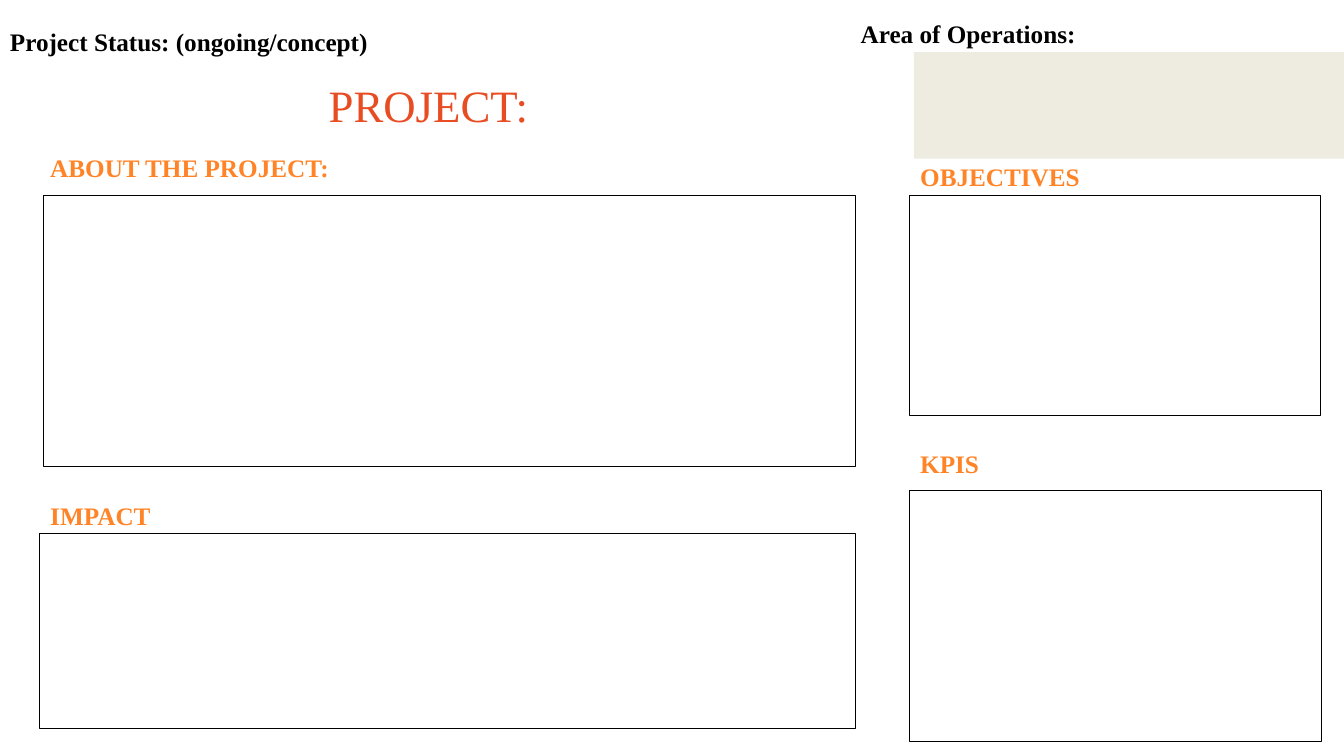
from pptx import Presentation
from pptx.dml.color import RGBColor
from pptx.enum.shapes import MSO_SHAPE
from pptx.enum.text import MSO_ANCHOR, MSO_AUTO_SIZE, PP_ALIGN
from pptx.util import Pt

BLACK = RGBColor(0x00, 0x00, 0x00)
RED = RGBColor(0xE8, 0x4C, 0x22)
ORANGE = RGBColor(0xFF, 0x84, 0x27)
BEIGE = RGBColor(0xEE, 0xEC, 0xE1)
FONT = "Times New Roman"
WIDE, HIGH = 960, 540

# Content: text, then left, top, width, height in points
TITLE = ("PROJECT:", (227.5, 51.8, 713.5, 52.6))
LABELS = [
    ("Project Status: (ongoing/concept)", (0, 15.1, 432.7, 28.8)),
    ("Area of Operations:", (607.7, 9.4, 323.3, 28.8)),
]
# Each section: heading, its box, line spacing, anchor, framed area
SECTIONS = [
    ("ABOUT THE PROJECT:", (28.8, 105.1, 582.5, 28.8), 1.0, MSO_ANCHOR.TOP,
     (31.3, 139.7, 579.7, 193.5)),
    ("IMPACT", (28.8, 354.2, 582.5, 28.8), 1.0, MSO_ANCHOR.TOP,
     (28.4, 381, 582.6, 139.5)),
    ("OBJECTIVES", (650.2, 106.6, 258.5, 33.8), 0.9, MSO_ANCHOR.BOTTOM,
     (649.8, 139.7, 293.3, 157)),
    ("KPIS", (650.2, 311.8, 258.5, 33.8), 0.9, MSO_ANCHOR.BOTTOM,
     (649.8, 350.3, 294.2, 179.3)),
]
BAND = (652.8, 37.2, WIDE - 652.8, 76.2)


def place(shape, box):
    shape.left, shape.top, shape.width, shape.height = map(Pt, box)


def write(shape, text, size=18, color=BLACK, bold=True, space=1.0,
          anchor=MSO_ANCHOR.TOP):
    frame = shape.text_frame
    frame.word_wrap = True
    frame.auto_size = MSO_AUTO_SIZE.NONE
    frame.vertical_anchor = anchor
    para = frame.paragraphs[0]
    para.alignment = PP_ALIGN.LEFT
    para.line_spacing = space
    run = para.add_run()
    run.text = text
    font = run.font
    font.name, font.size, font.bold = FONT, Pt(size), bold
    font.color.rgb = color


def add_text(slide, text, box, **style):
    write(slide.shapes.add_textbox(*map(Pt, box)), text, **style)


def add_rect(slide, box, fill=None, line=None):
    rect = slide.shapes.add_shape(MSO_SHAPE.RECTANGLE, *map(Pt, box))
    rect.shadow.inherit = False
    if fill is None:
        rect.fill.background()
    else:
        rect.fill.solid()
        rect.fill.fore_color.rgb = fill
    if line is None:
        rect.line.fill.background()
    else:
        rect.line.color.rgb = line
        rect.line.width = Pt(0.75)


def main():
    deck = Presentation()
    deck.slide_width, deck.slide_height = Pt(WIDE), Pt(HIGH)
    slide = deck.slides.add_slide(deck.slide_layouts[5])

    # Beige band and title
    add_rect(slide, BAND, fill=BEIGE)
    text, box = TITLE
    title = slide.shapes.title
    place(title, box)
    write(title, text, size=32, color=RED, bold=False, space=0.8,
          anchor=MSO_ANCHOR.MIDDLE)

    # Status and area labels
    for text, box in LABELS:
        add_text(slide, text, box)

    # Headed sections with empty frames
    for text, box, space, anchor, area in SECTIONS:
        add_text(slide, text, box, color=ORANGE, space=space, anchor=anchor)
        add_rect(slide, area, line=BLACK)

    deck.save("out.pptx")


if __name__ == "__main__":
    main()
